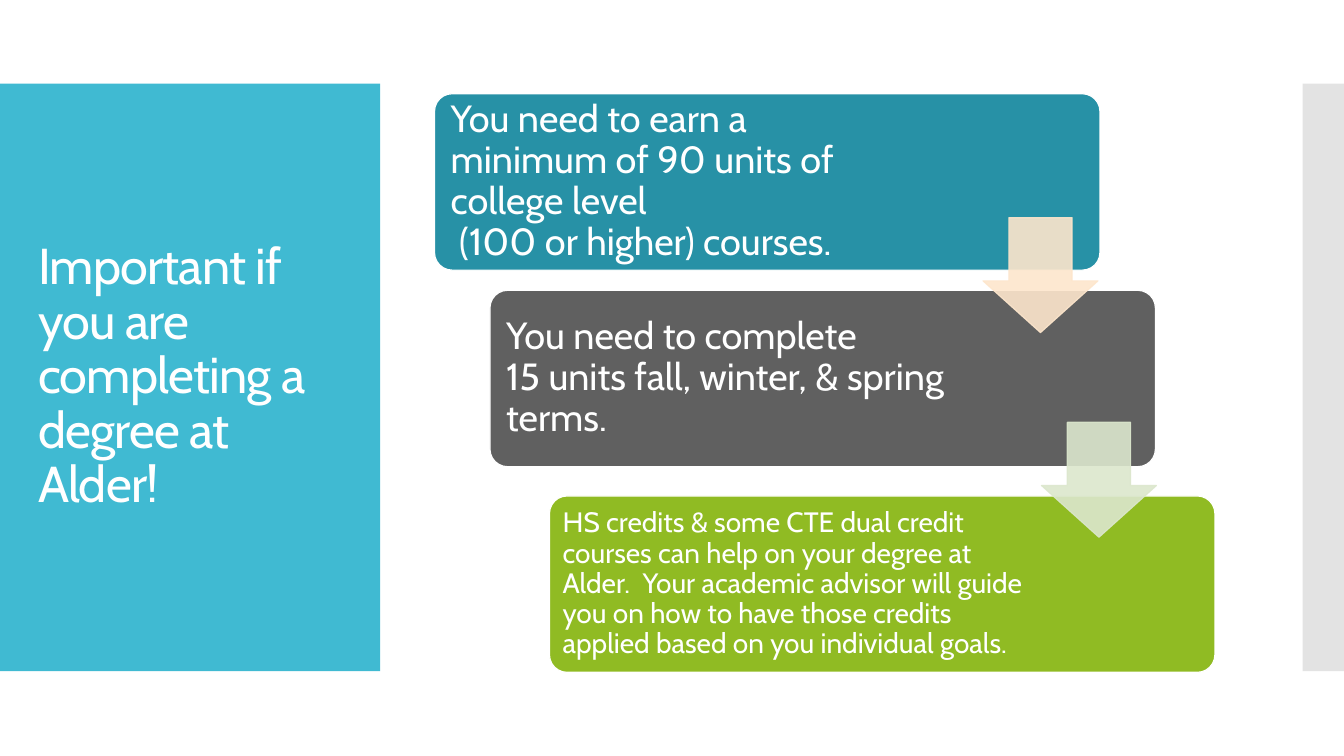
from lxml import etree
from pptx import Presentation
from pptx import util as u
from pptx.dml.color import RGBColor
from pptx.enum import shapes, text
from pptx.oxml import ns

WHITE = RGBColor(0xFF, 0xFF, 0xFF)
SKY = RGBColor(0x40, 0xBA, 0xD2)
SILVER = RGBColor(0xC8, 0xC8, 0xC8)
TEAL = RGBColor(0x27, 0x91, 0xA6)
GRAY = RGBColor(0x60, 0x60, 0x60)
GREEN = RGBColor(0x90, 0xBB, 0x23)
PEACH = RGBColor(0xFD, 0xE6, 0xCC)
SAGE = RGBColor(0xDC, 0xE7, 0xCD)

deck = Presentation()
deck.slide_width, deck.slide_height = u.Inches(13.33), u.Inches(7.5)
page = deck.slides.add_slide(deck.slide_layouts[5])


def write(box, words, size, inset=0.1, spacing=None):
    frame = box.text_frame
    frame.word_wrap = True
    frame.auto_size = text.MSO_AUTO_SIZE.NONE
    frame.vertical_anchor = text.MSO_ANCHOR.MIDDLE
    frame.margin_left = frame.margin_right = u.Inches(inset)
    frame.margin_top = frame.margin_bottom = u.Inches(inset)
    para = frame.paragraphs[0]
    para.text = words
    para.alignment = text.PP_ALIGN.LEFT
    para.line_spacing = 0.9
    for span in para.runs:
        span.font.name = "Cabin"
        span.font.size = u.Pt(size)
        span.font.color.rgb = WHITE
        if spacing is not None:
            span.font._element.set("spc", str(spacing))


def draw(kind, place, fill, line=None, adjust=(), opacity=100):
    shape = page.shapes.add_shape(kind, *map(u.Inches, place))
    shape.shadow.inherit = False
    shape.fill.solid()
    shape.fill.fore_color.rgb = fill
    if line is None:
        shape.line.fill.background()
    else:
        shape.line.color.rgb = line
        shape.line.width = u.Pt(0.85)
    for index, value in enumerate(adjust):
        shape.adjustments[index] = value
    if opacity < 100:
        for color in shape.element.spPr.iter(ns.qn("a:srgbClr")):
            etree.SubElement(color, ns.qn("a:alpha"), val=str(opacity * 1000))


# Side panels
PRESET = shapes.MSO_SHAPE
draw(PRESET.RECTANGLE, (0, 0.83, 3.77, 5.83), SKY)
draw(PRESET.RECTANGLE, (12.92, 0.83, 0.41, 5.83), SILVER, opacity=50)

# Title, brought in front of its panel
title = page.shapes.title
title.left, title.top = u.Inches(0.28), u.Inches(1.23)
title.width, title.height = u.Inches(3.22), u.Inches(5.03)
write(title, "Important if you are completing a degree at Alder!", 36, spacing=-60)
title.element.getparent().append(title.element)

# Staircase of cards: left, top, text width, fill, size, inset, words
CARD_WIDTH, CARD_HEIGHT, PAD = 6.6, 1.75, 0.05
cards = [
    (4.31, 0.93, 4.71, TEAL, 27, 0.11,
     "You need to earn a minimum of 90 units of college level\n"
     " (100 or higher) courses."),
    (4.86, 2.88, 4.78, GRAY, 27, 0.11,
     "You need to complete \n15 units fall, winter, & spring terms."),
    (5.45, 4.92, 4.78, GREEN, 20, 0.08,
     "HS credits & some CTE dual credit courses can help on your degree at "
     "Alder.  Your academic advisor will guide you on how to have those "
     "credits applied based on you individual goals."),
]
for left, top, width, fill, size, inset, words in cards:
    draw(PRESET.ROUNDED_RECTANGLE, (left, top, CARD_WIDTH, CARD_HEIGHT), fill,
         line=WHITE, adjust=[0.1])
    box = page.shapes.add_textbox(
        u.Inches(left + PAD), u.Inches(top + PAD),
        u.Inches(width), u.Inches(CARD_HEIGHT - 2 * PAD))
    write(box, words, size, inset=inset)

# Arrows from card to card
for left, top, fill in [(9.75, 2.16, PEACH), (10.33, 4.19, SAGE)]:
    draw(PRESET.DOWN_ARROW, (left, top, 1.14, 1.14), fill, line=fill,
         adjust=[0.55, 0.45], opacity=90)

deck.save("out.pptx")
